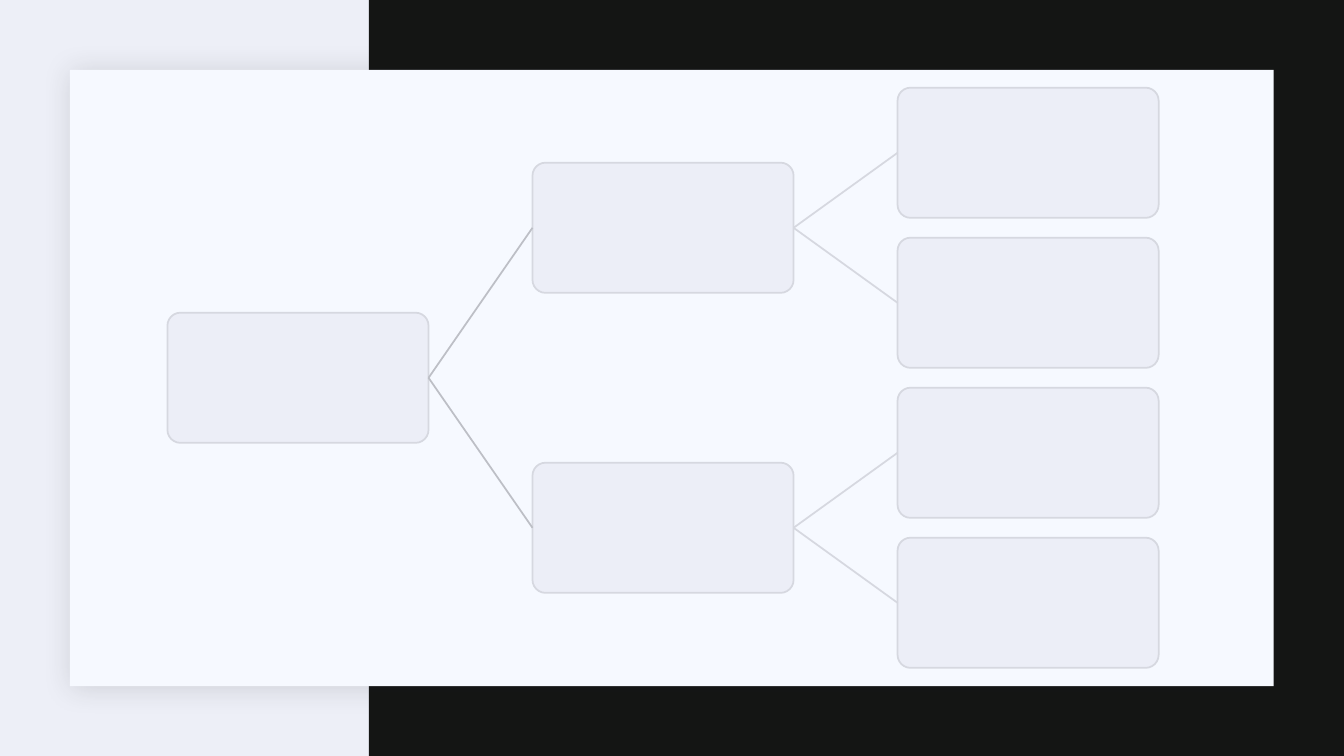
from dataclasses import dataclass

from lxml.etree import SubElement
from pptx import Presentation
from pptx.dml.color import RGBColor
from pptx.enum.shapes import MSO_CONNECTOR as Connector, MSO_SHAPE as Shape
from pptx.oxml.ns import qn
from pptx.util import Cm, Pt


@dataclass(frozen=True)
class Theme:
    background: str = "EDEFF7"
    dark_band: str = "141514"
    panel: str = "F6F9FF"
    shadow: str = "1F2125"
    node: str = "ECEEF7"
    outline: str = "D6D8E0"
    root_branch: str = "BDBFC6"
    line_width: float = 1.25


THEME = Theme()

# Tree geometry in centimetres
NODE_WIDTH, NODE_HEIGHT = 6.58, 3.28
FIRST_LEFT, COLUMN_STEP = 4.22, 9.2
MIDDLE, LEAF_STEP = 9.52, 3.78
LEVELS = 3
RIGHT_SIDE, LEFT_SIDE = 3, 1


def color(value):
    return RGBColor.from_string(value)


def add_box(slide, kind, left, top, width, height, fill):
    shape = slide.shapes.add_shape(kind, Cm(left), Cm(top), Cm(width), Cm(height))
    shape.shadow.inherit = False
    shape.fill.solid()
    shape.fill.fore_color.rgb = color(fill)
    shape.line.fill.background()
    return shape


def style_line(line, value):
    line.color.rgb = color(value)
    line.width = Pt(THEME.line_width)


def add_soft_shadow(shape):
    effects = shape._element.spPr.find(qn("a:effectLst"))
    shadow = SubElement(effects, qn("a:outerShdw"), blurRad=str(Pt(20)),
                        dist=str(Pt(2)), dir=str(45 * 60000),
                        algn="ctr", rotWithShape="0")
    tint = SubElement(shadow, qn("a:srgbClr"), val=THEME.shadow)
    SubElement(tint, qn("a:alpha"), val="15000")


def add_node(slide, level, center):
    node = add_box(slide, Shape.ROUNDED_RECTANGLE, FIRST_LEFT + level * COLUMN_STEP,
                   center - NODE_HEIGHT / 2, NODE_WIDTH, NODE_HEIGHT, THEME.node)
    node.adjustments[0] = 0.1
    style_line(node.line, THEME.outline)
    return node


def add_branch(slide, parent, child, value):
    branch = slide.shapes.add_connector(Connector.STRAIGHT, 0, 0, 0, 0)
    branch.begin_connect(parent, RIGHT_SIDE)
    branch.end_connect(child, LEFT_SIDE)
    style_line(branch.line, value)
    SubElement(branch._element.spPr, qn("a:effectLst"))


def add_tree(slide, level=0, center=MIDDLE):
    """Add a node with its whole subtree and return the node."""
    node = add_node(slide, level, center)
    if level < LEVELS - 1:
        offset = LEAF_STEP * 2 ** (LEVELS - 3 - level)
        branch_color = THEME.outline if level else THEME.root_branch
        for direction in (-1, 1):
            child = add_tree(slide, level + 1, center + direction * offset)
            add_branch(slide, node, child, branch_color)
    return node


def main():
    presentation = Presentation()
    presentation.slide_width, presentation.slide_height = Cm(33.87), Cm(19.05)
    slide = presentation.slides.add_slide(presentation.slide_layouts[6])

    # Backdrop
    slide.background.fill.solid()
    slide.background.fill.fore_color.rgb = color(THEME.background)
    add_box(slide, Shape.RECTANGLE, 9.3, 0, 24.57, 19.05, THEME.dark_band)
    panel = add_box(slide, Shape.RECTANGLE, 1.76, 1.76, 30.34, 15.53, THEME.panel)
    add_soft_shadow(panel)

    # Hierarchy
    add_tree(slide)

    presentation.save("out.pptx")


if __name__ == "__main__":
    main()
